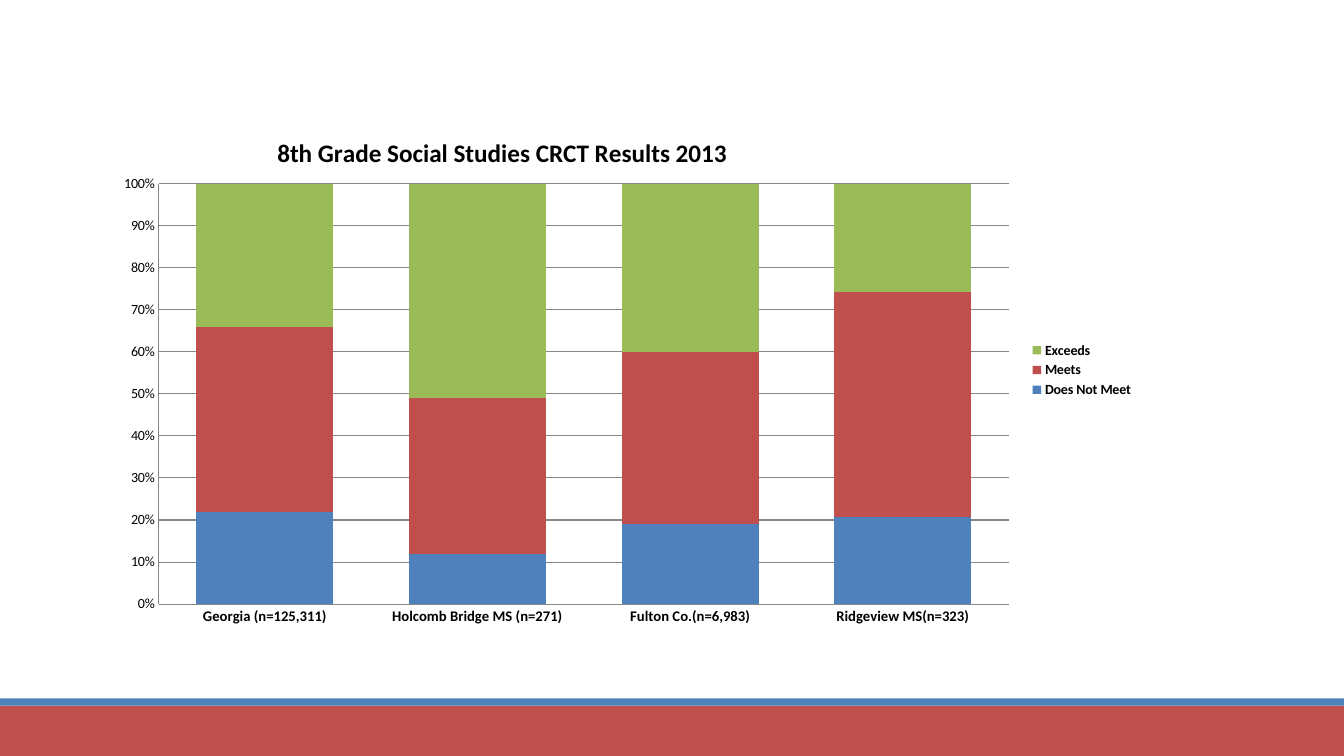
from dataclasses import dataclass

from pptx import Presentation
from pptx.chart.data import CategoryChartData
from pptx.dml.color import RGBColor
from pptx.enum.chart import XL_CHART_TYPE, XL_LEGEND_POSITION, XL_TICK_MARK
from pptx.enum.shapes import MSO_SHAPE
from pptx.oxml import parse_xml
from pptx.oxml.ns import nsdecls, qn
from pptx.util import Cm, Pt

STACKED = XL_CHART_TYPE.COLUMN_STACKED_100
RIGHT = XL_LEGEND_POSITION.RIGHT
NO_TICKS = XL_TICK_MARK.NONE
RECTANGLE = MSO_SHAPE.RECTANGLE

TITLE = "8th Grade Social Studies CRCT Results 2013"
SCHOOLS = [
    "Georgia (n=125,311)",
    "Holcomb Bridge MS (n=271)",
    "Fulton Co.(n=6,983)",
    "Ridgeview MS(n=323)",
]
RESULTS = {
    "Does Not Meet": (22, 12, 19, 21),
    "Meets": (44, 37, 41, 54),
    "Exceeds": (34, 51, 40, 26),
}


@dataclass(frozen=True)
class Theme:
    blue: RGBColor = RGBColor(0x4F, 0x81, 0xBD)
    red: RGBColor = RGBColor(0xC0, 0x50, 0x4D)
    green: RGBColor = RGBColor(0x9B, 0xBB, 0x59)
    text: RGBColor = RGBColor(0, 0, 0)
    line: RGBColor = RGBColor(0x86, 0x86, 0x86)
    font: str = "Calibri"
    title_size: Pt = Pt(18)
    category_size: Pt = Pt(10.5)
    body_size: Pt = Pt(10)


THEME = Theme()
SLIDE_WIDTH, SLIDE_HEIGHT = Cm(33.87), Cm(19.05)
BAND_HEIGHT, STRIPE_HEIGHT = Cm(1.27), Cm(0.18)
CHART_BOX = Cm(2.69), Cm(2.62), Cm(26.14), Cm(13.41)


def add_band(slide, top, height, color):
    band = slide.shapes.add_shape(RECTANGLE, 0, top, SLIDE_WIDTH, height)
    band.shadow.inherit = False
    band.fill.solid()
    band.fill.fore_color.rgb = color
    band.line.fill.background()


def style_font(font, size, bold=False):
    font.name = THEME.font
    font.size = size
    font.bold = bold
    font.color.rgb = THEME.text


def set_layout(element, position, **fractions):
    for layout in element.findall(qn("c:layout")):
        element.remove(layout)
    target = '<c:layoutTarget val="inner"/>' if "w" in fractions else ""
    modes = "".join(f'<c:{name}Mode val="edge"/>' for name in ("x", "y"))
    values = "".join(f'<c:{name} val="{value}"/>' for name, value in fractions.items())
    element.insert(position, parse_xml(
        f"<c:layout {nsdecls('c')}><c:manualLayout>{target}{modes}{values}"
        "</c:manualLayout></c:layout>"
    ))


def add_results_chart(slide):
    data = CategoryChartData()
    data.categories = SCHOOLS
    for name, values in RESULTS.items():
        data.add_series(name, values)
    chart = slide.shapes.add_chart(STACKED, *CHART_BOX, data).chart
    style_font(chart.font, THEME.body_size)

    chart.has_title = True
    chart.chart_title.include_in_layout = False
    paragraph = chart.chart_title.text_frame.paragraphs[0]
    paragraph.text = TITLE
    style_font(paragraph.font, THEME.title_size, bold=True)

    chart.has_legend = True
    chart.legend.position = RIGHT
    chart.legend.include_in_layout = False
    style_font(chart.legend.font, THEME.body_size, bold=True)

    plot = chart.plots[0]
    plot.gap_width = 55
    plot.overlap = 100
    plot.vary_by_categories = False
    for series, color in zip(plot.series, (THEME.blue, THEME.red, THEME.green)):
        series.format.fill.solid()
        series.format.fill.fore_color.rgb = color

    for axis in (chart.category_axis, chart.value_axis):
        axis.major_tick_mark = axis.minor_tick_mark = NO_TICKS
        axis.format.line.color.rgb = THEME.line
        axis.format.line.width = Pt(0.75)
    style_font(chart.category_axis.tick_labels.font, THEME.category_size, bold=True)

    value_axis = chart.value_axis
    value_axis.minimum_scale, value_axis.maximum_scale = 0, 1
    value_axis.major_unit = 0.1
    value_axis.tick_labels.number_format = "0%"
    value_axis.tick_labels.number_format_is_linked = False
    style_font(value_axis.tick_labels.font, THEME.body_size)
    value_axis.major_gridlines.format.line.color.rgb = THEME.line
    value_axis.major_gridlines.format.line.width = Pt(0.75)

    chart_root = chart.element.find(qn("c:chart"))
    set_layout(chart_root.find(qn("c:title")), 1, x=0.16, y=0.05)
    set_layout(chart_root.find(qn("c:plotArea")), 0, x=0.05, y=0.15, w=0.82, h=0.79)


def main():
    presentation = Presentation()
    presentation.slide_width = SLIDE_WIDTH
    presentation.slide_height = SLIDE_HEIGHT
    slide = presentation.slides.add_slide(presentation.slide_layouts[6])
    band_top = SLIDE_HEIGHT - BAND_HEIGHT
    add_band(slide, band_top, BAND_HEIGHT, THEME.red)
    add_band(slide, band_top - STRIPE_HEIGHT, STRIPE_HEIGHT, THEME.blue)
    add_results_chart(slide)
    presentation.save("out.pptx")


if __name__ == "__main__":
    main()
